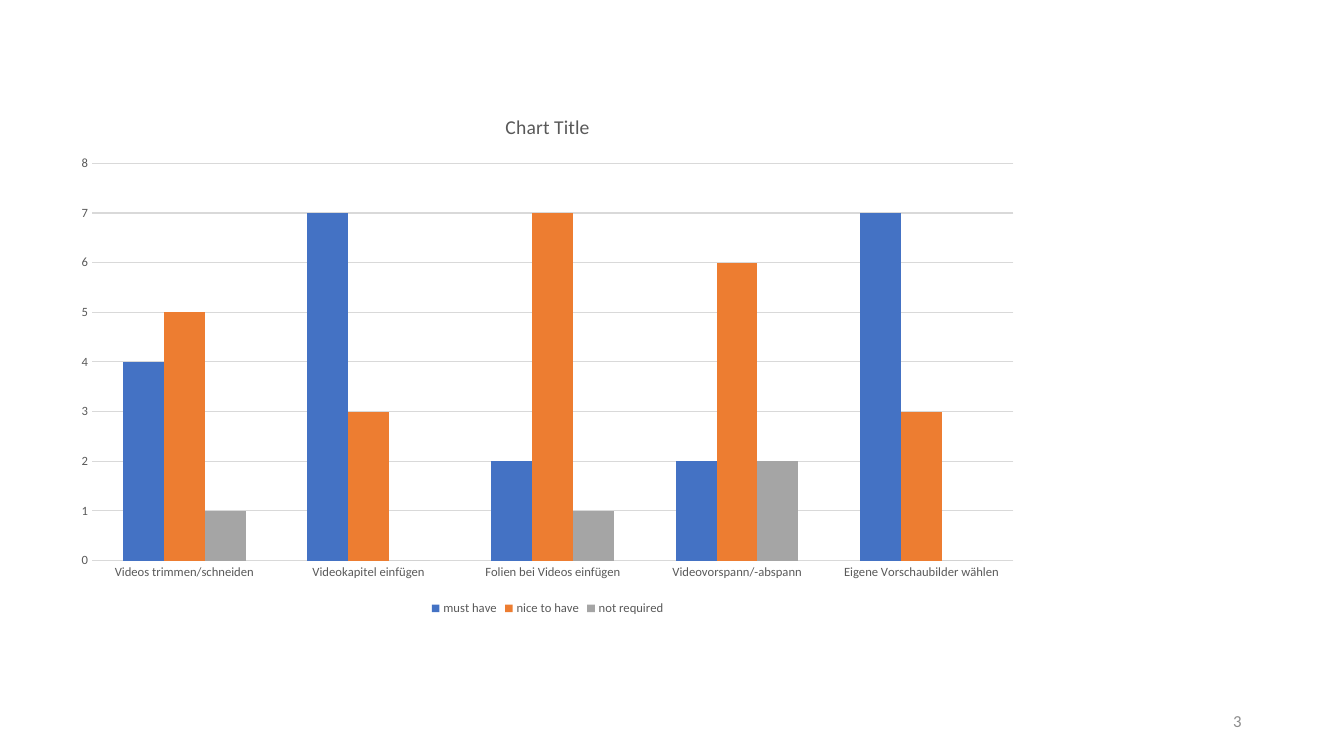
from pptx import Presentation
from pptx.chart import data as cd
from pptx.dml import color as dc
from pptx.enum import chart as ce, text as te
from pptx.util import Cm, Pt

COLORS = {
    "must have": "4472C4",
    "nice to have": "ED7D31",
    "not required": "A5A5A5",
    "text": "595959",
    "grid": "D9D9D9",
    "number": "8C8C8C",
}
FONT = "Calibri"


def style_font(font, size, color):
    font.name = FONT
    font.size = Pt(size)
    font.bold = False
    font.color.rgb = dc.RGBColor.from_string(COLORS[color])


def set_text(tf, content, *, size, color, align):
    p = tf.paragraphs[0]
    p.alignment = align
    r = p.add_run()
    r.text = content
    style_font(r.font, size, color)


prs = Presentation()
prs.slide_width, prs.slide_height = Cm(33.87), Cm(19.05)
s = prs.slides.add_slide(prs.slide_layouts[6])

# Ratings per feature
ratings = cd.CategoryChartData(number_format="General")
ratings.categories = [
    "Videos trimmen/schneiden",
    "Videokapitel einfügen",
    "Folien bei Videos einfügen",
    "Videovorspann/-abspann",
    "Eigene Vorschaubilder wählen",
]
ratings.add_series("must have", (4, 7, 2, 2, 7))
ratings.add_series("nice to have", (5, 3, 7, 6, 3))
ratings.add_series("not required", (1, 0, 1, 2, 0))

chart = s.shapes.add_chart(
    ce.XL_CHART_TYPE.COLUMN_CLUSTERED,
    Cm(1.57), Cm(2.36), Cm(24.46), Cm(13.26), ratings,
).chart
chart.font.name = FONT
chart.font.size = Pt(10)

chart.has_title = True
set_text(chart.chart_title.text_frame, "Chart Title",
         size=14, color="text", align=te.PP_ALIGN.CENTER)
chart.chart_title.include_in_layout = False

chart.has_legend = True
chart.legend.position = ce.XL_LEGEND_POSITION.BOTTOM
chart.legend.include_in_layout = False
style_font(chart.legend.font, 9, "text")

plot = chart.plots[0]
plot.gap_width = 150
plot.overlap = 0
plot.vary_by_categories = False
for series in plot.series:
    series.invert_if_negative = False
    series.format.fill.solid()
    series.format.fill.fore_color.rgb = dc.RGBColor.from_string(COLORS[series.name])

for axis in (chart.category_axis, chart.value_axis):
    axis.major_tick_mark = axis.minor_tick_mark = ce.XL_TICK_MARK.NONE
    axis.format.line.fill.background()
    style_font(axis.tick_labels.font, 9, "text")

value_axis = chart.value_axis
value_axis.minimum_scale, value_axis.maximum_scale, value_axis.major_unit = 0, 8, 1
grid = value_axis.major_gridlines.format.line
grid.width = Pt(0.75)
grid.color.rgb = dc.RGBColor.from_string(COLORS["grid"])

# Slide number
tf = s.shapes.add_textbox(Cm(23.92), Cm(17.66), Cm(7.62), Cm(1.01)).text_frame
tf.word_wrap = True
tf.vertical_anchor = te.MSO_ANCHOR.MIDDLE
set_text(tf, "3", size=12, color="number", align=te.PP_ALIGN.RIGHT)

prs.save("out.pptx")
